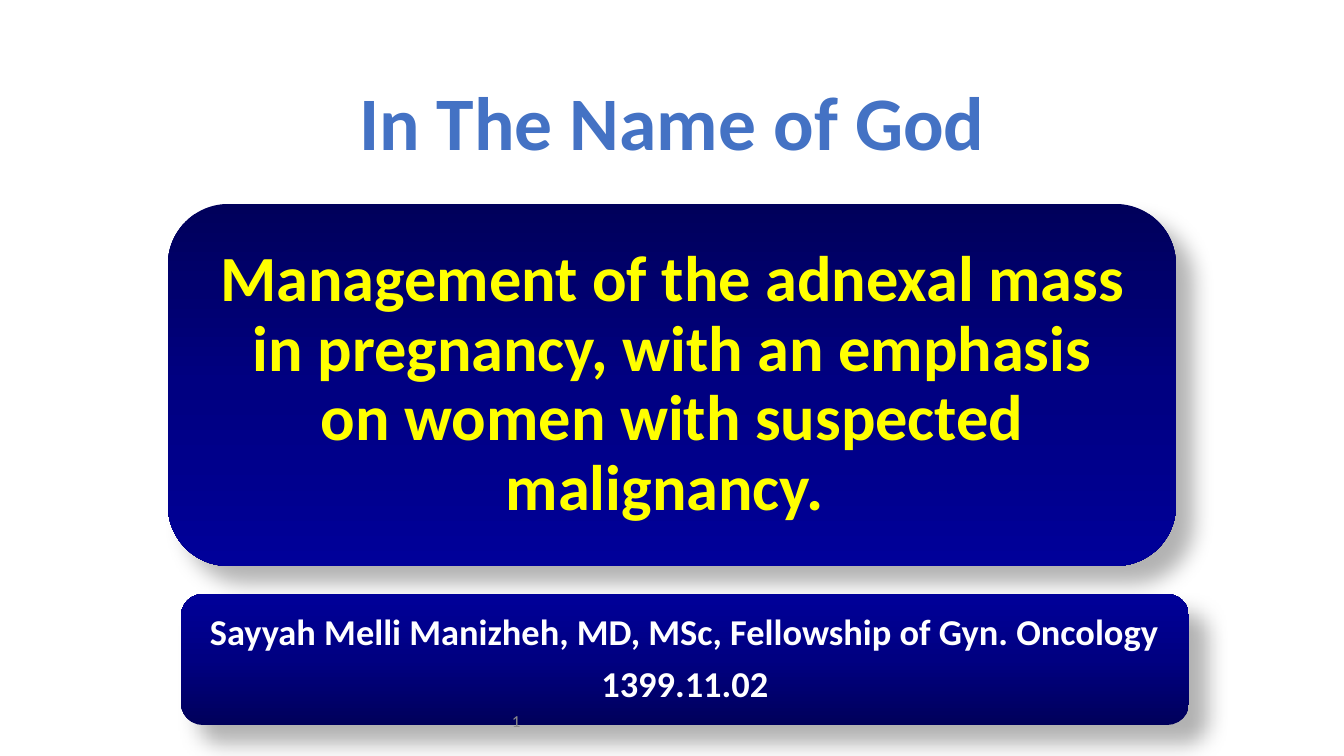
from lxml import etree
from pptx import Presentation
from pptx.dml.color import RGBColor
from pptx.enum.shapes import MSO_SHAPE as Shape
from pptx.enum.text import MSO_ANCHOR as Anchor, PP_ALIGN as Align
from pptx.oxml import parse_xml
from pptx.oxml.ns import nsdecls
from pptx.util import Emu, Pt

PAGE_WIDTH, PAGE_HEIGHT = 1344, 756
EMU_PER_PX = 12192000 / PAGE_WIDTH
GRADIENT = ((0, "00005B"), (50, "000081"), (100, "000099"))


def px(length):
    return Emu(round(length * EMU_PER_PX))


def color(value):
    return RGBColor.from_string(value)


def set_all(target, values):
    for name, value in values.items():
        setattr(target, name, value)


def add_text(page, box, lines, size, hex_color, bold=True, inset=None,
             wrap=True, para_format=None, anchor=Anchor.MIDDLE):
    """Place paragraphs in a text box and return the frame."""
    frame = page.shapes.add_textbox(*map(px, box)).text_frame
    set_all(frame, {"word_wrap": wrap, "vertical_anchor": anchor})
    if inset is not None:
        sides = ("left", "top", "right", "bottom")
        set_all(frame, {f"margin_{side}": px(inset) for side in sides})
    for index, line in enumerate(lines):
        para = frame.add_paragraph() if index else frame.paragraphs[0]
        para.text = line
        set_all(para, para_format or {})
        for span in para.runs:
            set_all(span.font, {"name": "Calibri", "size": Pt(size), "bold": bold})
            span.font.color.rgb = color(hex_color)
    return frame


def add_panel(page, box, angle, padding, lines, size, hex_color, inset, gap):
    """Rounded gradient panel with a soft shadow and centred text."""
    panel = page.shapes.add_shape(Shape.ROUNDED_RECTANGLE, *map(px, box))
    panel.shadow.inherit = False
    panel.line.fill.background()

    # Gradient fill
    stops = "".join(
        f'<a:gs pos="{place * 1000}"><a:srgbClr val="{value}"/></a:gs>'
        for place, value in GRADIENT)
    properties = panel.fill._xPr
    panel.fill.background()
    properties.replace(properties.find("{*}noFill"), parse_xml(
        f'<a:gradFill {nsdecls("a")} rotWithShape="1"><a:gsLst>{stops}</a:gsLst>'
        f'<a:lin ang="{angle * 60000}" scaled="0"/></a:gradFill>'))

    # Shadow towards the lower right
    properties.find("{*}effectLst").append(parse_xml(
        f'<a:outerShdw {nsdecls("a")} blurRad="{Pt(15)}" dist="{Pt(18)}" '
        f'dir="{45 * 60000}" algn="tl" rotWithShape="0"><a:srgbClr val="000000">'
        '<a:alpha val="30000"/></a:srgbClr></a:outerShdw>'))

    # Text inside the panel
    left, top, width, height = box
    inner = (left + padding, top + padding, width - 2 * padding, height - 2 * padding)
    add_text(page, inner, lines, size, hex_color, inset=inset, para_format={
        "alignment": Align.CENTER, "line_spacing": 0.9, "space_after": Pt(gap)})


def add_heading(page, box):
    """Blue heading with a thin white outline."""
    frame = add_text(page, box, ["In The Name of God"], 54, "4472C4", wrap=False,
                     para_format={"alignment": Align.CENTER}, anchor=Anchor.TOP)
    outline = parse_xml(
        f'<a:ln {nsdecls("a")} w="{Pt(0.75)}"><a:solidFill>'
        '<a:srgbClr val="FFFFFF"/></a:solidFill></a:ln>')
    frame.paragraphs[0].runs[0].font._element.insert(0, outline)


def build_title_page(page):
    # Subject panel
    add_panel(page, (168, 204, 1008, 362), 90, 18,
              ["Management of the adnexal mass in pregnancy, with an emphasis"
               "\von women with suspected malignancy. "],
              46, "FFFF00", inset=19, gap=16)
    # Author panel
    add_panel(page, (181, 594, 1008, 131), 270, 6,
              ["Sayyah Melli Manizheh, MD, MSc, Fellowship of Gyn. Oncology",
               "1399.11.02"],
              26, "FFFFFF", inset=11, gap=9)
    # Heading and page number
    add_heading(page, (346, 70, 652, 102))
    add_text(page, (502, 701, 302, 40), ["1"], 12, "8C8C8C", bold=False)


def main():
    deck = Presentation()
    set_all(deck, {"slide_width": px(PAGE_WIDTH), "slide_height": px(PAGE_HEIGHT)})
    build_title_page(deck.slides.add_slide(deck.slide_layouts[6]))
    deck.save("out.pptx")


if __name__ == "__main__":
    main()
